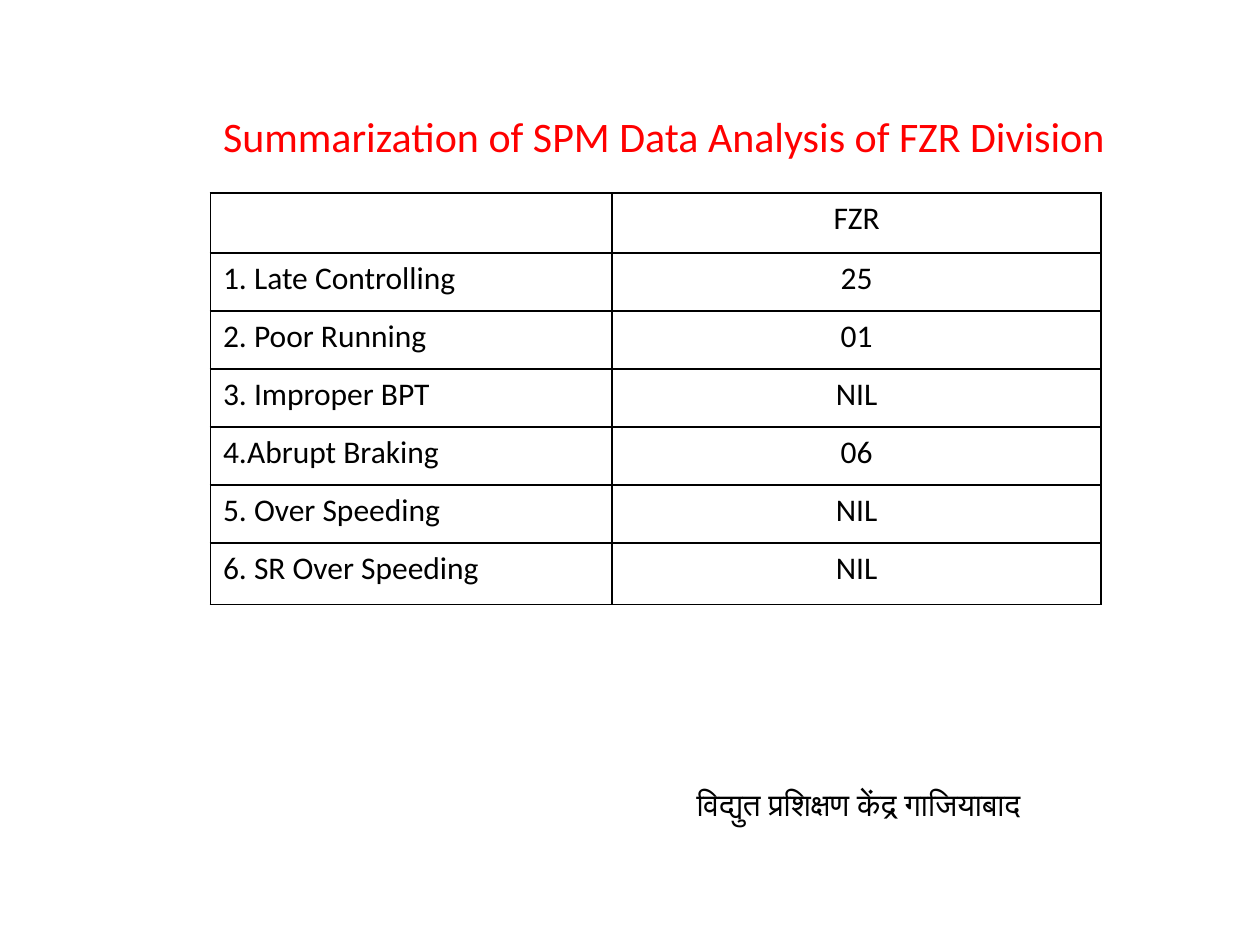
from lxml import etree
from pptx import Presentation
from pptx.dml.color import RGBColor
from pptx.enum.text import MSO_ANCHOR, PP_ALIGN
from pptx.oxml.ns import qn
from pptx.util import Inches, Pt

BLACK = RGBColor(0x00, 0x00, 0x00)
RED = RGBColor(0xFF, 0x00, 0x00)
LEFT, CENTER = PP_ALIGN.LEFT, PP_ALIGN.CENTER
TOP, MIDDLE = MSO_ANCHOR.TOP, MSO_ANCHOR.MIDDLE
FONT = "Calibri"

ROWS = [
    ("", "FZR"),
    ("1. Late Controlling", "25"),
    ("2. Poor Running", "01"),
    ("3. Improper BPT", "NIL"),
    ("4.Abrupt Braking", "06"),
    ("5. Over Speeding", "NIL"),
    ("6. SR Over Speeding", "NIL"),
]
COL_SHARES = (0.451, 0.549)
ROW_HEIGHTS = [0.48] + [0.46] * 5 + [0.49]


def write(tf, text, size, color, align=LEFT):
    p = tf.paragraphs[0]
    p.alignment = align
    r = p.add_run()
    r.text = text
    r.font.size = Pt(size)
    r.font.name = FONT
    r.font.color.rgb = color


def set_borders(cell):
    tc_pr = cell._tc.get_or_add_tcPr()
    for i, side in enumerate(("lnL", "lnR", "lnT", "lnB")):
        ln = etree.Element(qn(f"a:{side}"), w=str(Pt(1)))
        fill = etree.SubElement(ln, qn("a:solidFill"))
        etree.SubElement(fill, qn("a:srgbClr"), val=str(BLACK))
        tc_pr.insert(i, ln)


def add_title(slide, x, y, w, h):
    sp = slide.shapes.title
    sp.left, sp.top, sp.width, sp.height = map(Inches, (x, y, w, h))
    sp.text_frame.vertical_anchor = MIDDLE
    write(sp.text_frame, "Summarization of SPM Data Analysis of FZR Division",
          24, RED)


def add_summary_table(slide, x, y, w, h):
    frame = slide.shapes.add_table(len(ROWS), len(COL_SHARES),
                                   *map(Inches, (x, y, w, h)))
    table = frame.table
    table.first_row = table.horz_banding = False
    for col, share in zip(table.columns, COL_SHARES):
        col.width = Inches(w * share)
    for row, height, texts in zip(table.rows, ROW_HEIGHTS, ROWS):
        row.height = Inches(height)
        for cell, text, align in zip(row.cells, texts, (LEFT, CENTER)):
            cell.fill.background()
            cell.vertical_anchor = TOP
            set_borders(cell)
            if text:
                write(cell.text_frame, text, 18, BLACK, align)


def add_institute(slide, x, y, w, h):
    sp = slide.shapes.add_textbox(*map(Inches, (x, y, w, h)))
    sp.text_frame.word_wrap = False
    write(sp.text_frame, "विद्युत प्रशिक्षण केंद्र गाजियाबाद", 18, BLACK)


def main():
    prs = Presentation()
    prs.slide_width, prs.slide_height = Inches(10), Inches(7.5)
    slide = prs.slides.add_slide(prs.slide_layouts.get_by_name("Title Only"))

    # Heading, table and institute name, from top to bottom
    margin = 1.67
    add_title(slide, margin, 0.83, 7.67, 0.5)
    add_summary_table(slide, margin, 1.53, 7.07, sum(ROW_HEIGHTS))
    add_institute(slide, 5.43, 6.18, 3.32, 0.4)

    prs.save("out.pptx")


if __name__ == "__main__":
    main()
